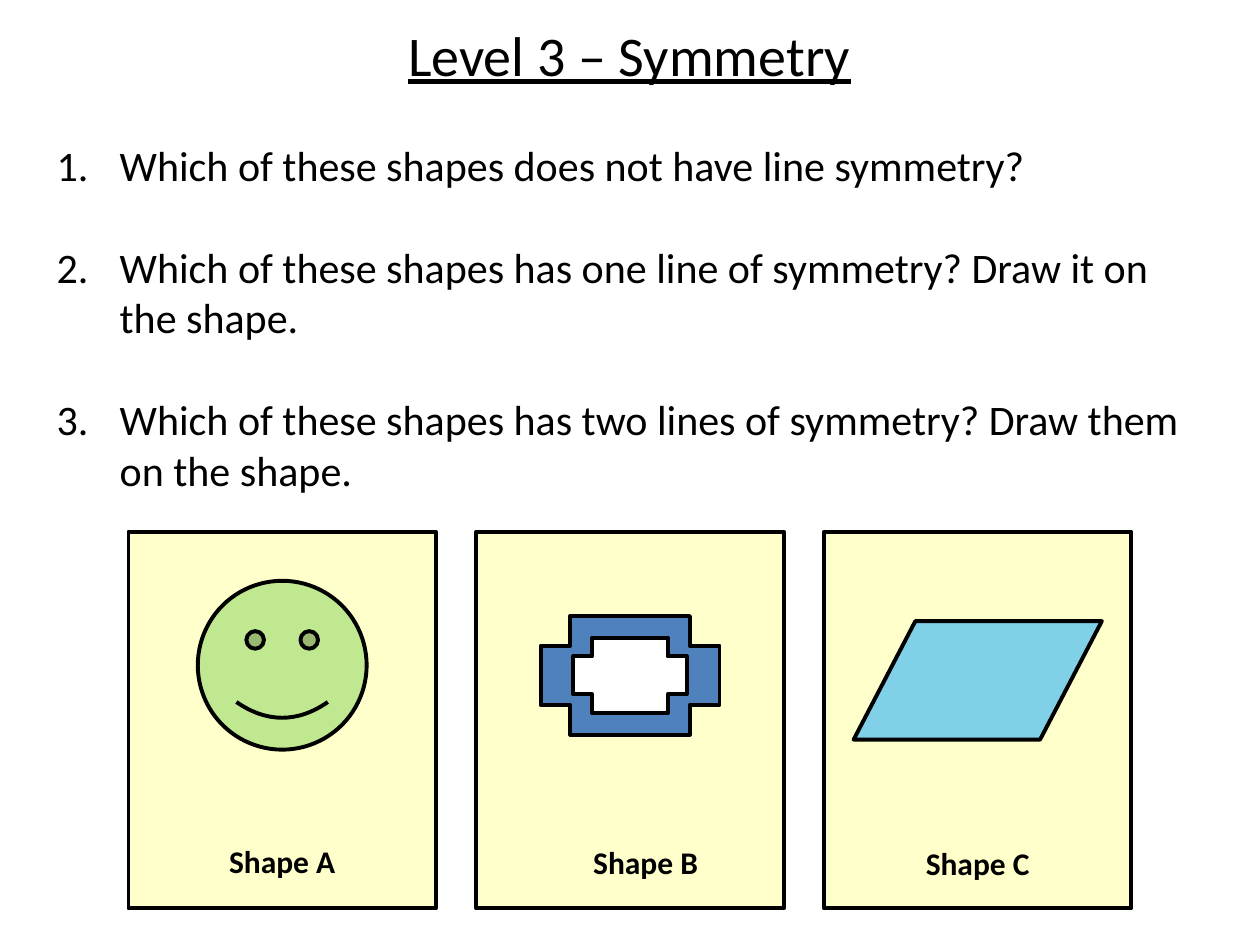
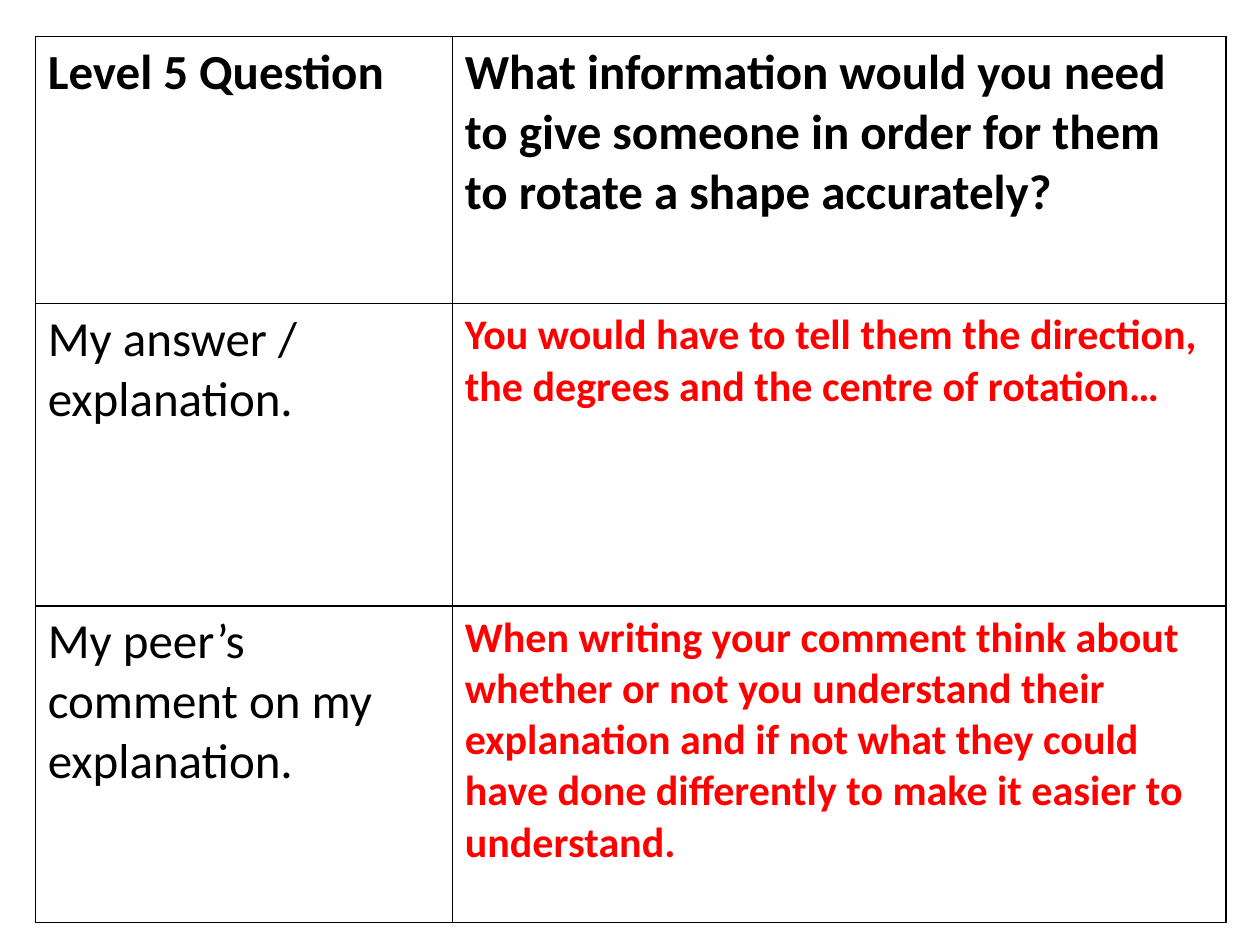
from dataclasses import dataclass

from lxml.etree import SubElement
from pptx import Presentation
from pptx.dml.color import RGBColor
from pptx.enum.shapes import MSO_SHAPE as Preset
from pptx.enum.text import MSO_ANCHOR as Anchor, MSO_AUTO_SIZE as AutoSize, PP_ALIGN as Align
from pptx.oxml.ns import qn
from pptx.util import Inches, Pt

COLUMNS, ROWS = 100, 75
CELL = Inches(0.1)


@dataclass(frozen=True)
class Theme:
    font: str = "Calibri"
    ink: str = "000000"
    answer: str = "FF0000"
    card: str = "FFFFCC"
    face: str = "C0E890"
    cross: str = "4F81BD"
    hole: str = "FFFFFF"
    slant: str = "80D0E8"
    title_size: int = 32
    prompt_size: int = 28
    body_size: int = 24
    label_size: int = 18
    outline: float = 2.25
    border: float = 1


@dataclass(frozen=True)
class Box:
    left: float
    top: float
    width: float
    height: float

    def area(self, left, top, width, height):
        return Box(self.left + left, self.top + top, width, height)

    def middle(self, width, height, right=0, down=0):
        return self.area((self.width - width) / 2 + right,
                         (self.height - height) / 2 + down, width, height)

    def emu(self):
        return [round(side * CELL) for side in (self.left, self.top, self.width, self.height)]


@dataclass(frozen=True)
class Figure:
    preset: Preset
    fill: str
    width: float
    height: float
    adjustment: float
    down: float
    turn: int = 0


THEME = Theme()
PAGE = Box(0, 0, COLUMNS, ROWS)

QUESTIONS = (
    "Which of these shapes does not have line symmetry?",
    "Which of these shapes has one line of symmetry? Draw it on the shape.",
    "Which of these shapes has two lines of symmetry? Draw them on the shape.",
)
CARDS = (
    ("Shape A", 0, 11.15,
     [Figure(Preset.SMILEY_FACE, THEME.face, 13.4, 13.4, 0.047, -4.35)]),
    ("Shape B", 1.25, 11.25,
     [Figure(Preset.CROSS, THEME.cross, 9.4, 14.2, 0.25, -3.55, 270),
      Figure(Preset.CROSS, THEME.hole, 6, 9, 0.25, -3.55, 270)]),
    ("Shape C", 0, 11.35,
     [Figure(Preset.PARALLELOGRAM, THEME.slant, 19.7, 9.4, 0.521, -3.15)]),
)
PROMPT = (THEME.prompt_size, THEME.ink, False)
HEADING = (THEME.prompt_size, THEME.ink, True)
ANSWER = (THEME.body_size, THEME.answer, True)
ANSWER_ROWS = (
    (("Level 5 Question", HEADING),
     ("What information would you need to give someone in order for them "
      "to rotate a shape accurately?", HEADING)),
    (("My answer / explanation.", PROMPT),
     ("You would have to tell them the direction, the degrees and the centre "
      "of rotation…", ANSWER)),
    (("My peer’s comment on my explanation.", PROMPT),
     ("When writing your comment think about whether or not you understand their "
      "explanation and if not what they could have done differently to make it "
      "easier to understand.", ANSWER)),
)


def add_span(para, text, size, color=THEME.ink, bold=False, underline=False):
    span = para.add_run()
    span.text = text
    font = span.font
    font.name, font.size, font.bold = THEME.font, Pt(size), bold
    font.underline = underline
    font.color.rgb = RGBColor.from_string(color)


def place(shape, box):
    shape.left, shape.top, shape.width, shape.height = box.emu()


def prepare_frame(shape, anchor):
    frame = shape.text_frame
    frame.word_wrap = True
    frame.auto_size = AutoSize.NONE
    frame.vertical_anchor = anchor
    return frame


def add_title(slide, box, text):
    place(slide.shapes.title, box)
    para = prepare_frame(slide.shapes.title, Anchor.TOP).paragraphs[0]
    para.alignment = Align.CENTER
    add_span(para, text, THEME.title_size, underline=True)


def add_questions(slide, box, questions):
    body = slide.placeholders[1]
    place(body, box)
    frame = prepare_frame(body, Anchor.TOP)
    for index, question in enumerate(questions):
        para = frame.paragraphs[0] if index == 0 else frame.add_paragraph()
        para.space_before = Pt(29.3 if index else 0)
        properties = para._p.get_or_add_pPr()
        properties.set("marL", str(Inches(0.5)))
        properties.set("indent", str(Inches(-0.5)))
        SubElement(properties, qn("a:buFont"), typeface="+mj-lt")
        SubElement(properties, qn("a:buAutoNum"), type="arabicPeriod")
        add_span(para, question, THEME.body_size)


def add_outlined(slide, preset, box, fill):
    shape = slide.shapes.add_shape(preset, *box.emu())
    shape.shadow.inherit = False
    shape.fill.solid()
    shape.fill.fore_color.rgb = RGBColor.from_string(fill)
    shape.line.color.rgb = RGBColor.from_string(THEME.ink)
    shape.line.width = Pt(THEME.outline)
    return shape


def add_card(slide, box, label, label_right, label_down, figures):
    add_outlined(slide, Preset.RECTANGLE, box, THEME.card)
    for figure in figures:
        figure_box = box.middle(figure.width, figure.height, down=figure.down)
        shape = add_outlined(slide, figure.preset, figure_box, figure.fill)
        shape.adjustments[0] = figure.adjustment
        shape.rotation = figure.turn
    label_box = box.middle(17.3, 4, label_right, label_down)
    caption = slide.shapes.add_textbox(*label_box.emu())
    para = prepare_frame(caption, Anchor.TOP).paragraphs[0]
    para.alignment = Align.CENTER
    add_span(para, label, THEME.label_size, bold=True)


def add_card_row(slide, box, cards, gap):
    width = (box.width - gap * (len(cards) - 1)) / len(cards)
    for index, card in enumerate(cards):
        add_card(slide, box.area(index * (width + gap), 0, width, box.height), *card)


def add_borders(cell):
    properties = cell._tc.get_or_add_tcPr()
    for position, side in enumerate(("lnL", "lnR", "lnT", "lnB")):
        line = properties.makeelement(qn(f"a:{side}"), {"w": str(Pt(THEME.border))})
        fill = SubElement(line, qn("a:solidFill"))
        SubElement(fill, qn("a:srgbClr"), val=THEME.ink)
        properties.insert(position, line)


def add_answer_table(slide, box, rows, widths, heights):
    table = slide.shapes.add_table(len(rows), len(widths), *box.emu()).table
    table.first_row = table.horz_banding = False
    for column, width in zip(table.columns, widths):
        column.width = round(width * CELL)
    for row, height, entries in zip(table.rows, heights, rows):
        row.height = round(height * CELL)
        for cell, (text, style) in zip(row.cells, entries):
            cell.fill.background()
            add_borders(cell)
            add_span(cell.text_frame.paragraphs[0], text, *style)


def build_symmetry_slide(deck):
    slide = deck.slides.add_slide(deck.slide_layouts[1])
    add_title(slide, PAGE.area(3.5, 1.1, 92.9, 6.4), "Level 3 – Symmetry")
    add_questions(slide, PAGE.area(3.5, 10.6, 92.9, 29.2), QUESTIONS)
    add_card_row(slide, PAGE.area(10.2, 42.2, 79.6, 29.9), CARDS, gap=3.2)


def build_answer_slide(deck):
    slide = deck.slides.add_slide(deck.slide_layouts[6])
    table_box = PAGE.area(2.8, 2.9, 94.5, 70.3)
    add_answer_table(slide, table_box, ANSWER_ROWS, (33.1, 61.4), (21.2, 24, 25.1))


def main():
    deck = Presentation()
    deck.slide_width, deck.slide_height = COLUMNS * CELL, ROWS * CELL
    build_symmetry_slide(deck)
    build_answer_slide(deck)
    deck.save("out.pptx")


if __name__ == "__main__":
    main()
